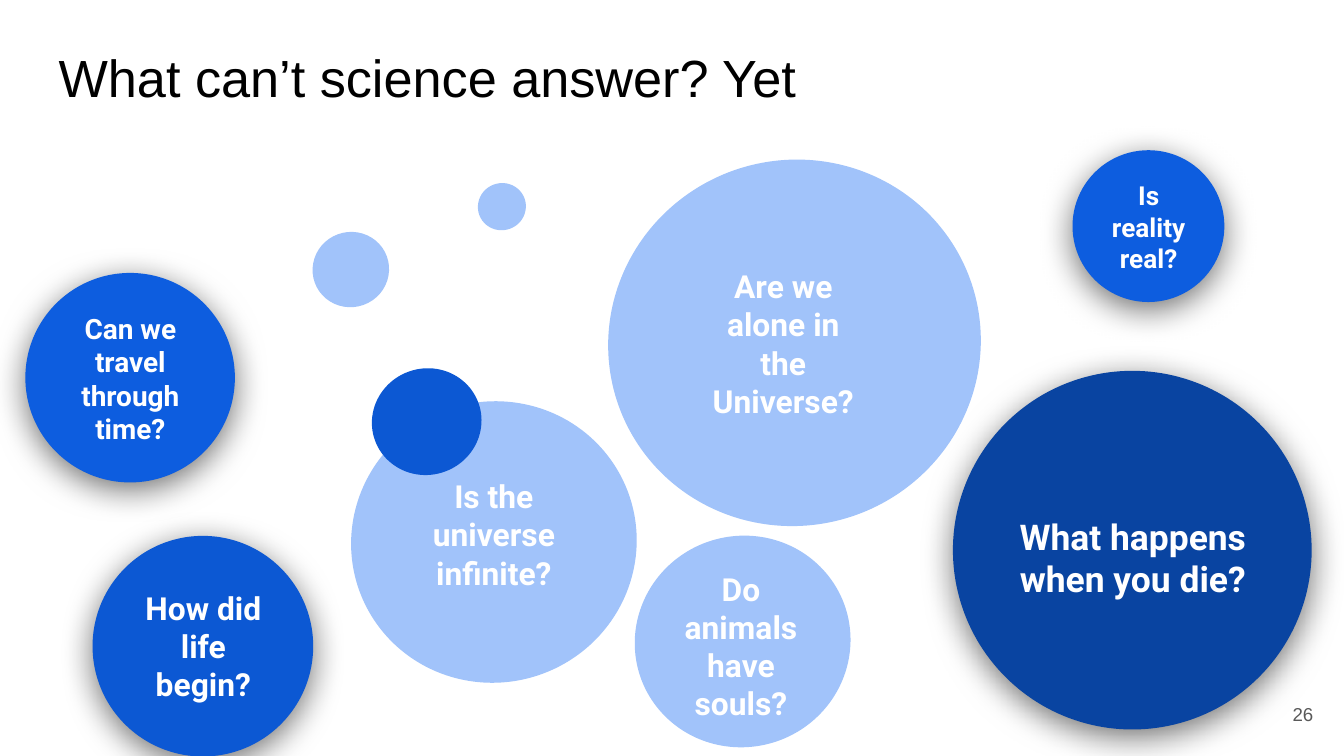
"""Build the slide of open science questions set in bubbles."""
from lxml.etree import SubElement
from pptx import Presentation
from pptx.dml.color import RGBColor
from pptx.enum.shapes import MSO_SHAPE
from pptx.enum.text import MSO_ANCHOR, PP_ALIGN
from pptx.oxml.ns import qn
from pptx.util import Cm, Pt

PALE, BRIGHT, STRONG, DEEP = "A1C3FA", "0D5DDF", "0C58D3", "0944A1"
WHITE, BLACK, GREY = "FFFFFF", "000000", "595959"
FLAT_ROTATION = 250
TEXT_INSET = 0.25

TITLE = ("What can’t science answer? Yet", (0.86, 0.61, 23.67, 1.6))
PAGE_NUMBER = ("26", (23.55, 12.95, 1.52, 1.09))

FLAT_BUBBLES = [
    ((12.04, 10.08, 3.99, 4.09), PALE),
    ((5.92, 4.37, 1.42, 1.45), PALE),
    ((6.68, 7.54, 5.31, 5.41), PALE),
    ((11.56, 2.95, 6.91, 7.06), PALE),
    ((7.06, 6.93, 2.01, 2.08), STRONG),
    ((9.04, 3.45, 0.89, 0.91), PALE),
]
RAISED_BUBBLES = [
    ((18.01, 7.01, 6.78, 6.78), DEEP),
    ((0.48, 5.16, 3.96, 3.96), BRIGHT),
    ((1.75, 10.13, 4.17, 4.17), STRONG),
    ((20.27, 2.84, 2.87, 2.87), BRIGHT),
]
QUESTIONS = [
    ("What happens when you die?", (18.82, 8.92, 5.18, 3.23), 19),
    ("Can we travel through time?", (1.12, 5.84, 2.69, 2.62), 15),
    ("How did life begin?", (2.36, 10.9, 2.97, 2.62), 17),
    ("Is reality real?", (20.73, 3.33, 1.96, 1.91), 14),
    ("Is the universe infinite?", (7.85, 8.79, 2.97, 2.62), 17),
    ("Are we alone in the Universe?", (13.08, 5.18, 3.45, 2.62), 17),
    ("Do animals have souls?", (12.52, 10.9, 2.97, 2.62), 17),
]


def color(value):
    return RGBColor.from_string(value)


def add_bubble(slide, box, fill, rotation=0):
    bubble = slide.shapes.add_shape(MSO_SHAPE.OVAL, *map(Cm, box))
    bubble.rotation = rotation
    bubble.fill.solid()
    bubble.fill.fore_color.rgb = color(fill)
    bubble.line.fill.background()
    bubble.shadow.inherit = False
    return bubble


def add_shadow(shape):
    effects = shape._element.spPr.find(qn("a:effectLst"))
    shadow = SubElement(effects, qn("a:outerShdw"), blurRad=str(Pt(18)), dist=str(Pt(4)),
                        dir="5400000", algn="bl", rotWithShape="0")
    tint = SubElement(shadow, qn("a:srgbClr"), val=BLACK)
    SubElement(tint, qn("a:alpha"), val="55000")


def add_text(slide, text, box, size, font, fill, alignment, anchor=MSO_ANCHOR.MIDDLE, bold=False):
    frame = slide.shapes.add_textbox(*map(Cm, box)).text_frame
    frame.word_wrap = True
    frame.vertical_anchor = anchor
    frame.margin_left = frame.margin_right = Cm(TEXT_INSET)
    frame.margin_top = frame.margin_bottom = Cm(TEXT_INSET)
    paragraph = frame.paragraphs[0]
    paragraph.text = text
    paragraph.alignment = alignment
    paragraph.font.size = Pt(size)
    paragraph.font.name = font
    paragraph.font.bold = bold
    paragraph.font.color.rgb = color(fill)


def main():
    presentation = Presentation()
    presentation.slide_width, presentation.slide_height = Cm(25.4), Cm(14.29)
    slide = presentation.slides.add_slide(presentation.slide_layouts[6])

    add_text(slide, *TITLE, 28, "Arial", BLACK, PP_ALIGN.LEFT, MSO_ANCHOR.TOP)
    for box, fill in FLAT_BUBBLES:
        add_bubble(slide, box, fill, FLAT_ROTATION)
    for box, fill in RAISED_BUBBLES:
        add_shadow(add_bubble(slide, box, fill))
    for text, box, size in QUESTIONS:
        add_text(slide, text, box, size, "Roboto", WHITE, PP_ALIGN.CENTER, bold=True)
    add_text(slide, *PAGE_NUMBER, 10, "Arial", GREY, PP_ALIGN.RIGHT)

    presentation.save("out.pptx")


if __name__ == "__main__":
    main()
